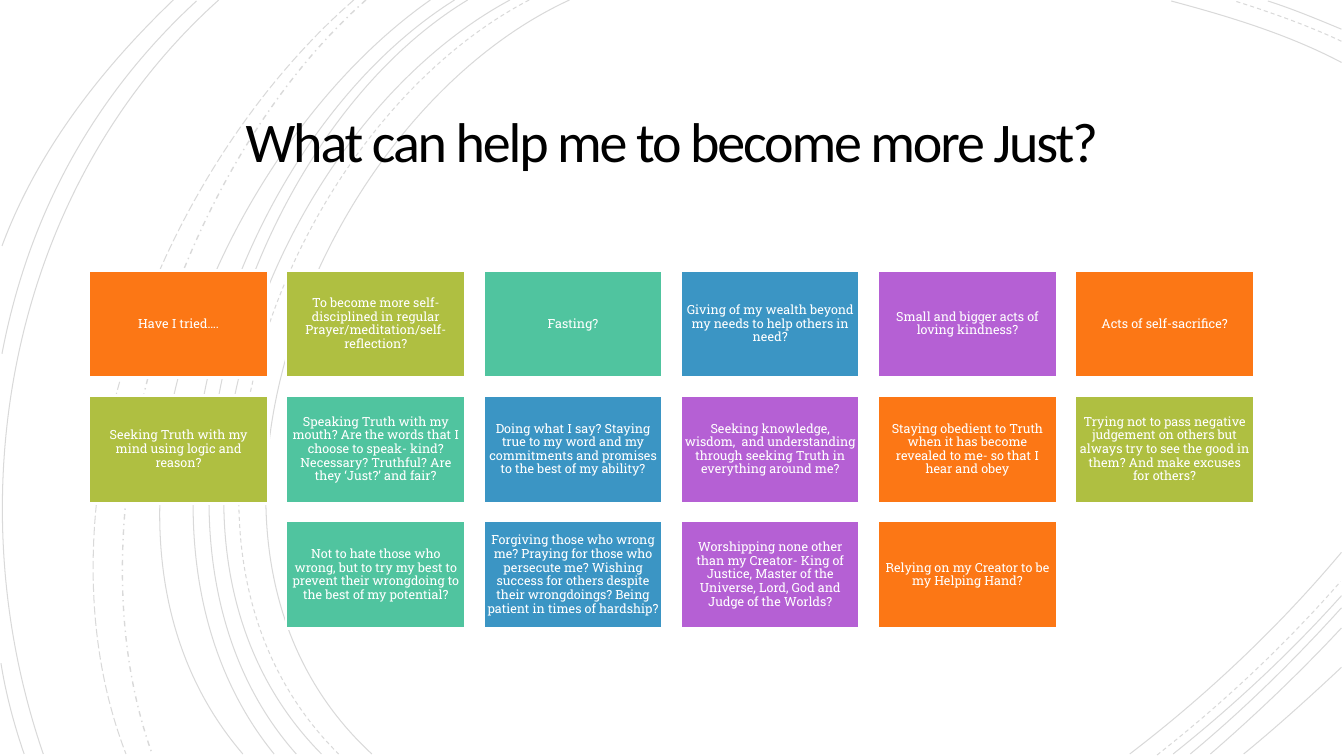
from dataclasses import dataclass
from lxml.etree import SubElement
from pptx import Presentation
from pptx.dml.color import RGBColor as RGB
from pptx.enum.dml import MSO_LINE as Dash
from pptx.enum.shapes import MSO_SHAPE as Shape
from pptx.enum.text import MSO_ANCHOR as Anchor, PP_ALIGN as Align
from pptx.oxml.ns import qn
from pptx.util import Cm, Pt


@dataclass
class Theme:
    ink: RGB = RGB(0, 0, 0)
    paper: RGB = RGB(255, 255, 255)
    fills: tuple = ("FC7715", "AFBF41", "50C49F", "3B95C4", "B560D4")
    head: tuple = ("Calibri", Pt(40))
    body: tuple = ("Roboto Slab", Pt(9))
    alpha: int = 15


theme = Theme()
deck = Presentation()
deck.slide_width, deck.slide_height = Cm(33.87), Cm(19.05)
slide = deck.slides.add_slide(deck.slide_layouts[6])
shapes = slide.shapes
slide.background.fill.solid()
slide.background.fill.fore_color.rgb = theme.paper


def write(shape, text, font, color, inset, gap):
    """Put one centred run in the shape and return it."""
    frame = shape.text_frame
    frame.word_wrap = True
    frame.vertical_anchor = Anchor.MIDDLE
    frame.margin_left = frame.margin_right = inset
    frame.margin_top = frame.margin_bottom = inset
    para = frame.paragraphs[0]
    para.alignment = Align.CENTER
    para.line_spacing = gap
    run = para.add_run()
    run.text = text
    run.font.name, run.font.size = font
    run.font.color.rgb = color
    return run


def draw_arc(points, dash, width):
    """Draw a cubic curve: start, two control points, end."""
    path = shapes.build_freeform(*points[0], scale=Cm(2.54) / 100)
    path.add_line_segments(points[1:], close=False)
    arc = path.convert_to_shape()
    arc.shadow.inherit = False
    arc.fill.background()
    arc.line.color.rgb = theme.ink
    arc.line.width = Pt(width)
    arc.line.dash_style = dash
    tint = next(arc.line._ln.iter(qn("a:srgbClr")))
    SubElement(tint, qn("a:alpha")).set("val", str(theme.alpha * 1000))
    outline = next(arc._element.iter(qn("a:path")))
    curve = SubElement(outline, qn("a:cubicBezTo"))
    for leg in outline.findall(qn("a:lnTo")):
        curve.append(leg[0])
        outline.remove(leg)


# Curves in hundredths of an inch, grouped by line style
arcs = [
    (Dash.SOLID, 0.75, [
        (565, 0, 315, 115, 143, 540, 369, 748),
        (506, 0, 270, 127, 110, 537, 319, 748),
        (464, 0, 244, 133, 110, 541, 294, 748),
        (451, 0, 231, 138, 97, 533, 272, 748),
        (427, 0, 217, 147, 53, 529, 241, 748),
        (217, 0, 11, 185, -46, 490, 43, 748),
        (195, 1, 92, 96, 28, 214, 2, 351),
        (172, 0, 100, 69, 37, 150, 2, 244),
        (1, 658, 6, 689, 14, 719, 24, 748),
        (1331, 62, 1278, 34, 1218, 16, 1162, 1),
        (1331, 29, 1307, 19, 1283, 9, 1258, 1),
        (1121, 748, 1197, 690, 1269, 622, 1331, 548),
        (1164, 748, 1223, 701, 1280, 648, 1331, 591),
        (1181, 748, 1234, 704, 1284, 655, 1331, 603),
        (1201, 748, 1246, 709, 1290, 667, 1331, 623),
        (1234, 748, 1267, 721, 1299, 692, 1331, 662),
    ]),
    (Dash.DASH, 0.75, [
        (525, 0, 285, 125, 123, 537, 336, 748),
        (1331, 41, 1297, 25, 1260, 12, 1225, 1),
        (1148, 749, 1213, 698, 1275, 640, 1330, 577),
    ]),
    (Dash.DASH_DOT, 1, [(363, 0, 176, 166, 65, 509, 151, 748)]),
    (Dash.LONG_DASH, 0.75, [(351, 0, 157, 169, 29, 499, 125, 748)]),
]
for dash, width, curves in arcs:
    for nums in curves:
        draw_arc(list(zip(nums[::2], nums[1::2])), dash, width)

title = shapes.add_textbox(Cm(4.88), Cm(2.21), Cm(24.1), Cm(2.92))
run = write(title, "What can help me to become more Just?",
            theme.head, theme.ink, Cm(0.64), 0.85)
run.font._element.set("spc", "-150")

# Each row: its first column, then the card texts
rows = [
    (0, [
        "Have I tried….",
        "To become more self-disciplined in regular "
        "Prayer/meditation/self-reflection?",
        "Fasting?",
        "Giving of my wealth beyond my needs to help others in need?",
        "Small and bigger acts of loving kindness?",
        "Acts of self-sacrifice?",
    ]),
    (0, [
        "Seeking Truth with my mind using logic and reason?",
        "Speaking Truth with my mouth? Are the words that I choose to "
        "speak- kind? Necessary? Truthful? Are they ‘Just?’ and fair?",
        "Doing what I say? Staying true to my word and my commitments "
        "and promises to the best of my ability?",
        "Seeking knowledge, wisdom,  and understanding through seeking "
        "Truth in everything around me?",
        "Staying obedient to Truth when it has become revealed to me- "
        "so that I hear and obey",
        "Trying not to pass negative judgement on others but always try "
        "to see the good in them? And make excuses for others?",
    ]),
    (1, [
        "Not to hate those who wrong, but to try my best to prevent "
        "their wrongdoing to the best of my potential?",
        "Forgiving those who wrong me? Praying for those who persecute "
        "me? Wishing success for others despite their wrongdoings? "
        "Being patient in times of hardship?",
        "Worshipping none other than my Creator- King of Justice, Master "
        "of the Universe, Lord, God and Judge of the Worlds?",
        "Relying on my Creator to be my Helping Hand?",
    ]),
]
count = 0
for row, (first, texts) in enumerate(rows):
    for col, text in enumerate(texts, first):
        card = shapes.add_shape(
            Shape.RECTANGLE, Cm(2.24 + 4.97 * col), Cm(6.81 + 3.16 * row),
            Cm(4.52), Cm(2.71))
        card.shadow.inherit = False
        card.fill.solid()
        fill = theme.fills[count % len(theme.fills)]
        card.fill.fore_color.rgb = RGB.from_string(fill)
        card.line.color.rgb = theme.paper
        card.line.width = Pt(2)
        write(card, text, theme.body, theme.paper, Cm(0.1), 0.9)
        count += 1

deck.save("out.pptx")
